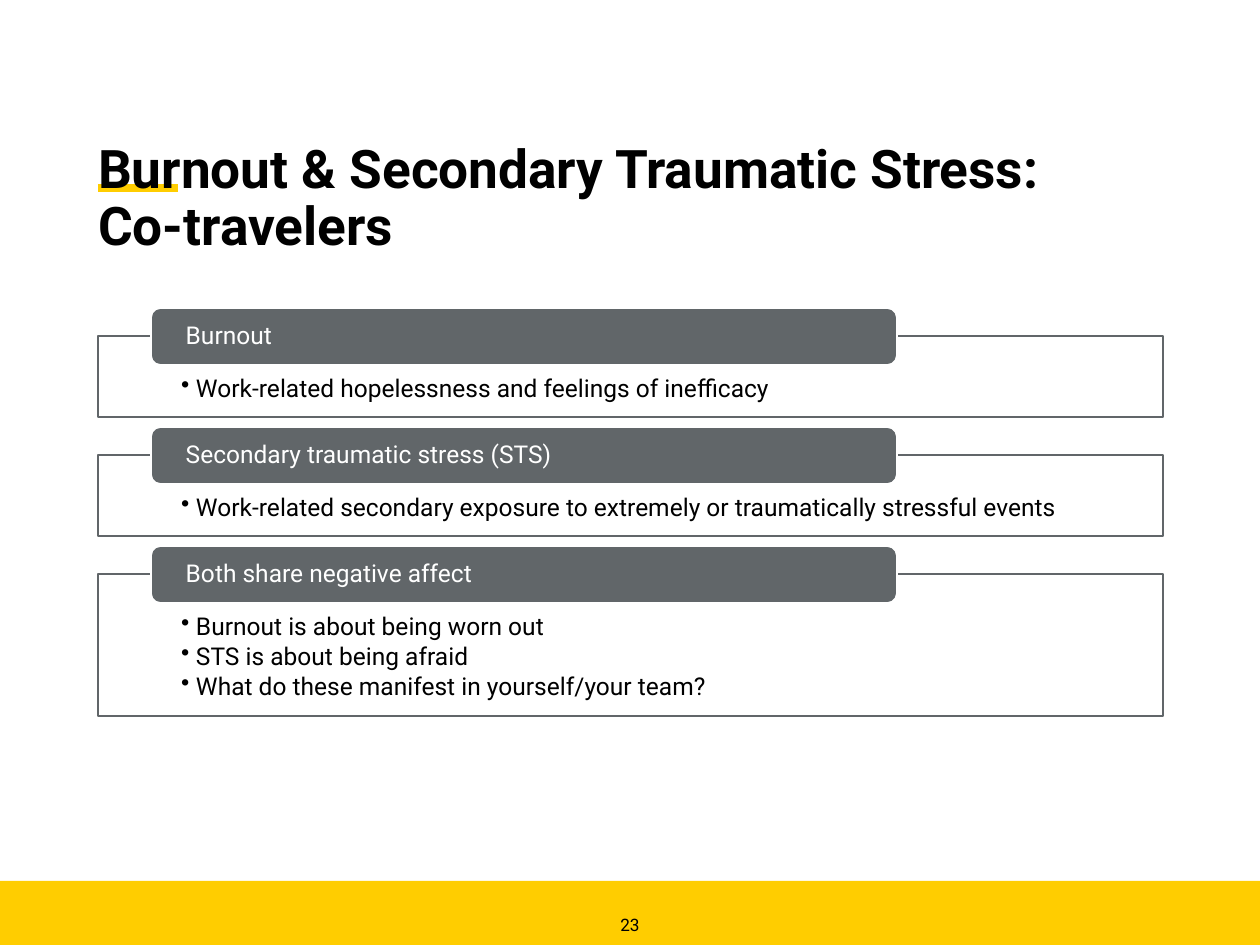
from dataclasses import dataclass

from lxml.etree import SubElement as Sub
from pptx import Presentation
from pptx.dml.color import RGBColor as Rgb
from pptx.enum.shapes import MSO_CONNECTOR as Link, MSO_SHAPE as Kind
from pptx.enum.text import MSO_ANCHOR as Anchor, MSO_AUTO_SIZE as Fit, PP_ALIGN as Align
from pptx.oxml.ns import qn
from pptx.util import Pt


@dataclass(frozen=True)
class Theme:
    font: str = "Roboto"
    gold: Rgb = Rgb(0xFF, 0xCD, 0x00)
    gray: Rgb = Rgb(0x61, 0x66, 0x69)
    white: Rgb = Rgb(0xFF, 0xFF, 0xFF)
    black: Rgb = Rgb(0, 0, 0)
    title: float = 30.4
    body: float = 14
    note: float = 9.8
    lead: float = 0.9


@dataclass(frozen=True)
class Panel:
    head: str
    items: tuple[str, ...]
    high: int


THEME = Theme()
LEFT, WIDE = 98, 1065
TOP, GAP = 336, 38
TAB_X, TAB_W, TAB_H, RISE = 151, 746, 57, 28
INDENT = 15
PANELS = (
    Panel("Burnout", ("Work-related hopelessness and feelings of inefficacy",), 81),
    Panel(
        "Secondary traumatic stress (STS)",
        ("Work-related secondary exposure to extremely or traumatically stressful events",),
        81,
    ),
    Panel(
        "Both share negative affect",
        (
            "Burnout is about being worn out",
            "STS is about being afraid",
            "What do these manifest in yourself/your team?",
        ),
        142,
    ),
)


def px(num: int) -> int:
    return round(num * 914400 / 126)


def box(num: tuple[int, int, int, int]) -> list[int]:
    return [px(n) for n in num]


def frame(shape, pad: tuple[int, int, int, int], anchor: Anchor):
    text = shape.text_frame
    text.auto_size = Fit.NONE
    text.word_wrap = True
    text.vertical_anchor = anchor
    text.margin_left, text.margin_top, text.margin_right, text.margin_bottom = box(pad)
    return text


def style(text, size: float, color: Rgb, align: Align = Align.LEFT, bold: bool = False) -> None:
    for para in text.paragraphs:
        para.alignment = align
        para.line_spacing = THEME.lead
        for run in para.runs:
            run.font.name = THEME.font
            run.font.size = Pt(size)
            run.font.bold = bold
            run.font.color.rgb = color


def block(slide, kind: Kind, area: tuple[int, int, int, int], fill: Rgb, line: Rgb | None = None):
    shape = slide.shapes.add_shape(kind, *box(area))
    shape.shadow.inherit = False
    shape.fill.solid()
    shape.fill.fore_color.rgb = fill
    if line is None:
        shape.line.fill.background()
    else:
        shape.line.color.rgb = line
        shape.line.width = Pt(1)
    return shape


def bullet(para) -> None:
    props = para._p.get_or_add_pPr()
    props.set("marL", str(px(INDENT)))
    props.set("indent", str(-px(INDENT)))
    Sub(props, qn("a:buChar")).set("char", "•")
    para.level = 1
    para.space_after = Pt(2.1)


def draw(slide, panel: Panel, top: int) -> None:
    body = block(slide, Kind.RECTANGLE, (LEFT, top, WIDE, panel.high), THEME.white, THEME.gray)
    tint = body.element.spPr.find(qn("a:solidFill"))[0]
    Sub(tint, qn("a:alpha")).set("val", "90000")
    text = frame(body, (83, 40, 83, 14), Anchor.TOP)
    text.text = "\n".join(panel.items)
    for para in text.paragraphs:
        bullet(para)
    style(text, THEME.body, THEME.black)

    tab = block(
        slide, Kind.ROUNDED_RECTANGLE, (TAB_X, top - RISE, TAB_W, TAB_H), THEME.gray, THEME.white
    )
    text = frame(tab, (32, 0, 32, 0), Anchor.MIDDLE)
    text.text = panel.head
    style(text, THEME.body, THEME.white)


def main() -> None:
    deck = Presentation()
    deck.slide_width, deck.slide_height = px(1260), px(945)
    slide = deck.slides.add_slide(deck.slide_layouts[5])

    block(slide, Kind.RECTANGLE, (0, 881, 1260, 64), THEME.gold)
    rule = slide.shapes.add_connector(Link.STRAIGHT, *box((LEFT, 188, 178, 188)))
    rule.line.color.rgb = THEME.gold
    rule.line.width = Pt(5)
    Sub(rule.element.spPr, qn("a:effectLst"))

    page = slide.shapes.add_textbox(*box((599, 902, 62, 33)))
    text = frame(page, (0, 0, 0, 0), Anchor.BOTTOM)
    text.text = "23"
    style(text, THEME.note, THEME.black, Align.CENTER)

    title = slide.shapes.title
    title.left, title.top, title.width, title.height = box((LEFT, 155, WIDE, 89))
    title.element.getparent().append(title.element)
    text = frame(title, (0, 0, 0, 0), Anchor.MIDDLE)
    text.text = "Burnout & Secondary Traumatic Stress:\vCo-travelers"
    style(text, THEME.title, THEME.black, bold=True)

    top = TOP
    for panel in PANELS:
        draw(slide, panel, top)
        top += panel.high + GAP

    deck.save("out.pptx")


if __name__ == "__main__":
    main()
